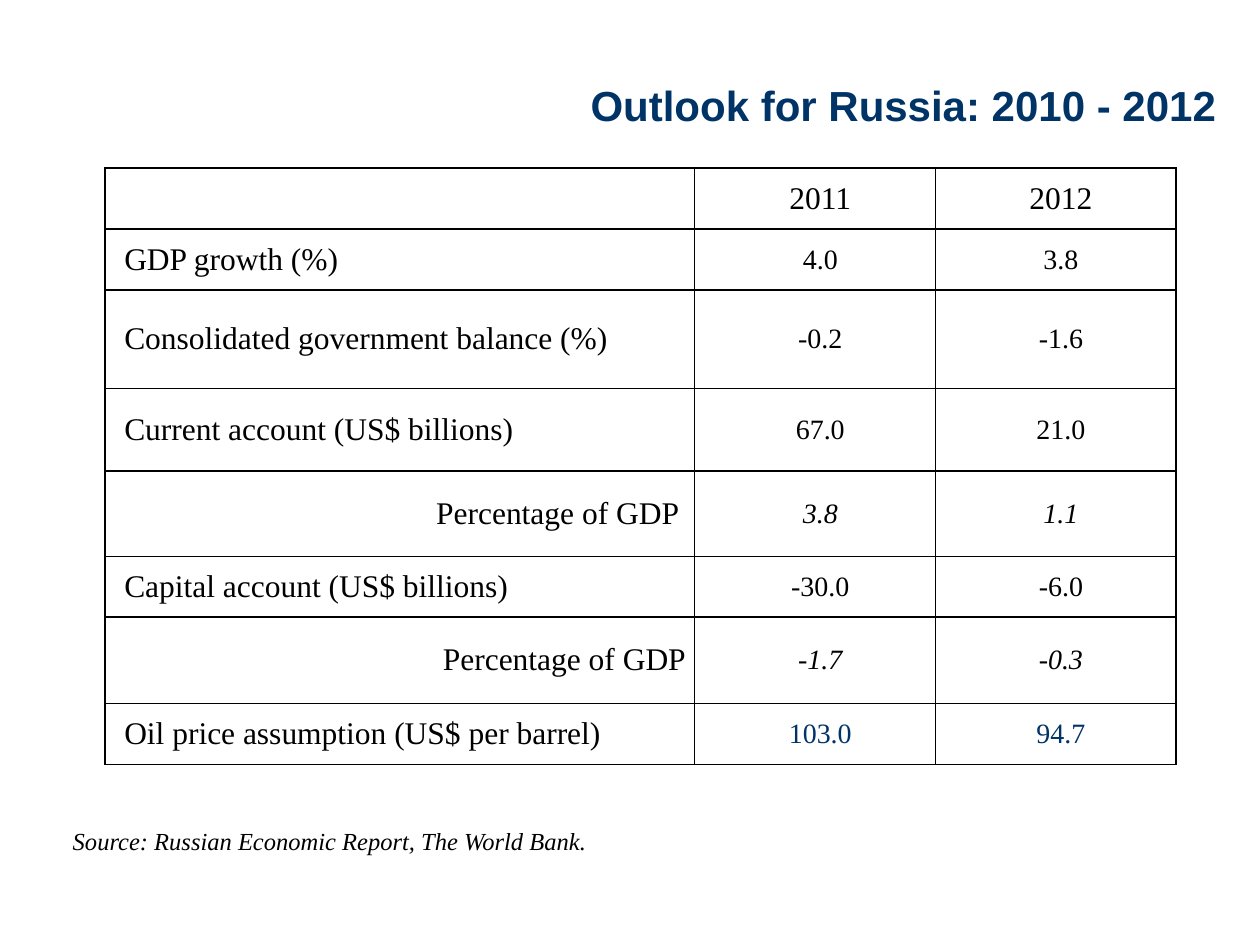
from dataclasses import dataclass

from lxml import etree
from pptx import Presentation
from pptx.dml.color import RGBColor
from pptx.enum.text import MSO_ANCHOR, PP_ALIGN
from pptx.oxml.ns import qn
from pptx.util import Pt

LEFT, CENTER, RIGHT = PP_ALIGN.LEFT, PP_ALIGN.CENTER, PP_ALIGN.RIGHT
MIDDLE, BOTTOM = MSO_ANCHOR.MIDDLE, MSO_ANCHOR.BOTTOM
BLACK, NAVY, WHITE = "000000", "003366", "FFFFFF"
SERIF, SANS = "Times New Roman", "Arial"
COLUMN_WIDTHS = (337, 137.5, 137.5)
CELL_INDENT = 6


@dataclass
class OutlookRow:
    height: float
    label: str
    values: tuple[str, str]
    label_align: PP_ALIGN = LEFT
    value_size: float = 16
    value_color: str = BLACK
    italic: bool = False
    italic_minus: bool = False


ROWS = [
    OutlookRow(34.9, "", ("2011", "2012"), value_size=18),
    OutlookRow(34.9, "GDP growth (%)", ("4.0", "3.8")),
    OutlookRow(56.1, "Consolidated government balance (%)", ("-0.2", "-1.6"), italic_minus=True),
    OutlookRow(47.3, "Current account (US$ billions)", ("67.0", "21.0")),
    OutlookRow(48.7, "Percentage of GDP ", ("3.8", "1.1"), RIGHT, italic=True),
    OutlookRow(34.7, "Capital account (US$ billions)", ("-30.0", "-6.0"), italic_minus=True),
    OutlookRow(49.3, "Percentage of GDP", ("-1.7", "-0.3"), RIGHT, italic=True),
    OutlookRow(34.9, "Oil price assumption (US$ per barrel)", ("103.0", "94.7"),
               value_color=NAVY),
]


def rgb(color: str) -> RGBColor:
    return RGBColor.from_string(color)


def add_run(paragraph, text: str, color: str = BLACK, **formats) -> None:
    run = paragraph.add_run()
    run.text = text
    run.font.color.rgb = rgb(color)
    for name, value in formats.items():
        setattr(run.font, name, value)


def set_indent(paragraph, points: float) -> None:
    properties = paragraph._p.get_or_add_pPr()
    properties.set("marL", str(Pt(points)))
    properties.set("indent", "0")


def add_text_box(slide, left: float, top: float, width: float, height: float, anchor):
    """Add a wrapping text box and return its first paragraph."""
    shape = slide.shapes.add_textbox(Pt(left), Pt(top), Pt(width), Pt(height))
    shape.text_frame.word_wrap = True
    shape.text_frame.vertical_anchor = anchor
    return shape.text_frame.paragraphs[0]


def set_borders(cell, top_width: float) -> None:
    properties = cell._tc.get_or_add_tcPr()
    widths = {"a:lnL": 1, "a:lnR": 1, "a:lnT": top_width, "a:lnB": 1}
    for position, (tag, width) in enumerate(widths.items()):
        line = etree.Element(qn(tag), w=str(Pt(width)))
        fill = etree.SubElement(line, qn("a:solidFill"))
        etree.SubElement(fill, qn("a:srgbClr"), val=BLACK)
        properties.insert(position, line)


def format_cell(cell, align: PP_ALIGN, top_width: float):
    """Style a cell and return its paragraph."""
    formats = {"margin_left": Pt(5), "margin_right": Pt(5), "margin_top": 0,
               "margin_bottom": 0, "vertical_anchor": MIDDLE}
    for name, value in formats.items():
        setattr(cell, name, value)
    cell.fill.background()
    set_borders(cell, top_width)
    paragraph = cell.text_frame.paragraphs[0]
    paragraph.alignment = align
    set_indent(paragraph, CELL_INDENT)
    return paragraph


def fill_row(table, index: int, row: OutlookRow) -> None:
    table.rows[index].height = Pt(row.height)
    top_width = 1.5 if index == 0 else 1
    paragraph = format_cell(table.cell(index, 0), row.label_align, top_width)
    if row.label:
        add_run(paragraph, row.label, name=SERIF, size=Pt(18))
    for column, value in enumerate(row.values, start=1):
        paragraph = format_cell(table.cell(index, column), CENTER, top_width)
        font = {"name": SERIF, "size": Pt(row.value_size)}
        if row.italic_minus:
            add_run(paragraph, "-", row.value_color, italic=True, **font)
            value = value.removeprefix("-")
        add_run(paragraph, value, row.value_color, italic=row.italic, **font)


def add_outlook_table(slide) -> None:
    shape = slide.shapes.add_table(
        len(ROWS), len(COLUMN_WIDTHS), Pt(60), Pt(96),
        Pt(sum(COLUMN_WIDTHS)), Pt(sum(row.height for row in ROWS)))
    table = shape.table
    table.first_row = table.horz_banding = False
    for column, width in zip(table.columns, COLUMN_WIDTHS):
        column.width = Pt(width)
    for index, row in enumerate(ROWS):
        fill_row(table, index, row)


def main() -> None:
    presentation = Presentation()
    presentation.slide_width, presentation.slide_height = Pt(720), Pt(540)
    slide = presentation.slides.add_slide(presentation.slide_layouts[6])
    slide.background.fill.solid()
    slide.background.fill.fore_color.rgb = rgb(WHITE)

    # Title
    title = add_text_box(slide, 126, 12, 576, 66, BOTTOM)
    title.alignment = RIGHT
    add_run(title, "Outlook for Russia: 2010 - 2012", NAVY, name=SANS, size=Pt(24), bold=True)

    # Forecast table
    add_outlook_table(slide)

    # Source line
    source = add_text_box(slide, 22, 468, 698, 24.5, MIDDLE)
    set_indent(source, 12.5)
    add_run(source, "Source: Russian Economic Report, The World Bank.",
            name=SERIF, size=Pt(14), italic=True)

    presentation.save("out.pptx")


if __name__ == "__main__":
    main()
